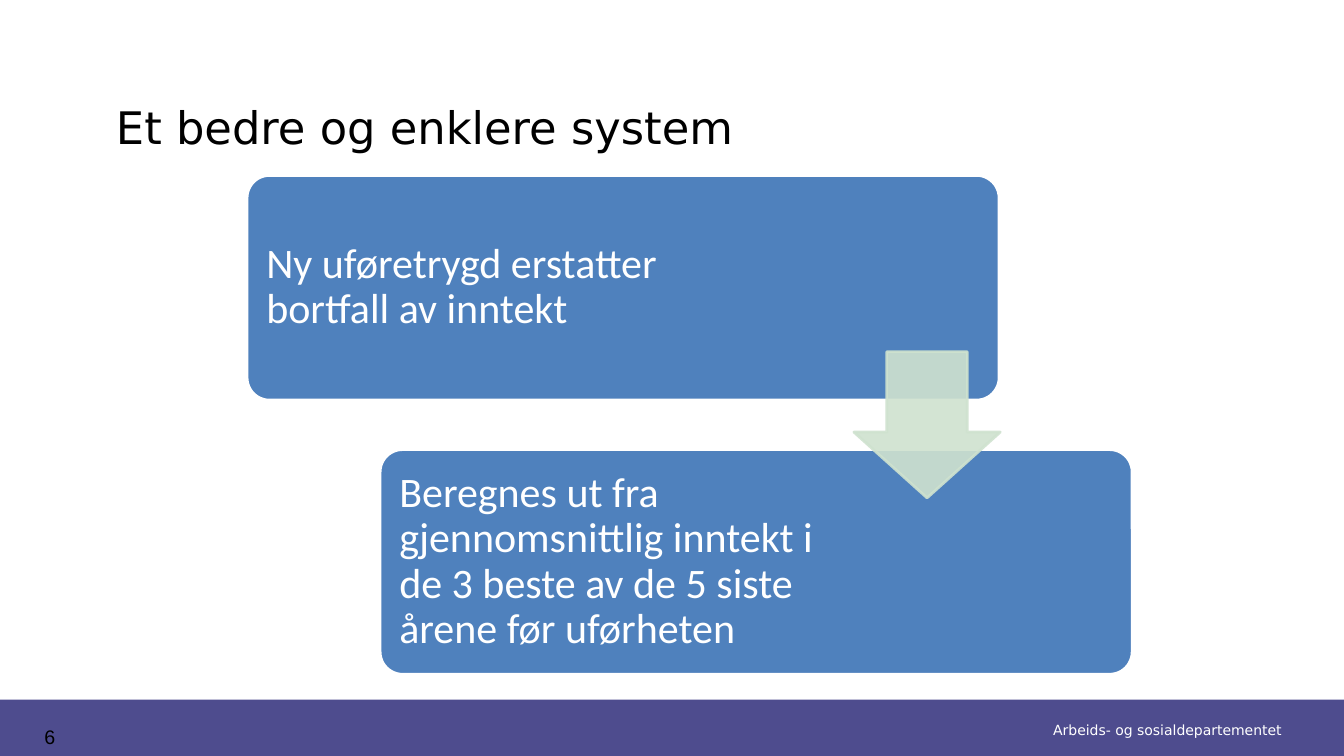
from lxml import etree
from pptx import Presentation
from pptx.dml.color import RGBColor
from pptx.enum.shapes import MSO_SHAPE
from pptx.enum.text import MSO_ANCHOR, MSO_AUTO_SIZE, PP_ALIGN
from pptx.oxml.ns import qn
from pptx.util import Inches, Pt

RECT, ROUND, DOWN = MSO_SHAPE.RECTANGLE, MSO_SHAPE.ROUNDED_RECTANGLE, MSO_SHAPE.DOWN_ARROW
TOP, MIDDLE, BOTTOM = MSO_ANCHOR.TOP, MSO_ANCHOR.MIDDLE, MSO_ANCHOR.BOTTOM
LEFT, CENTER, RIGHT = PP_ALIGN.LEFT, PP_ALIGN.CENTER, PP_ALIGN.RIGHT
NO_FIT = MSO_AUTO_SIZE.NONE
TITLE_ONLY = 5

COLORS = {"white": "FFFFFF", "black": "000000", "footer": "4E4C8E",
          "step": "4F81BD", "arrow": "CFE2CF"}

# Boxes are left, top, width, height in percent of the slide's size.
STEP_BOX = (18.38, 23.2, 55.96, 29.73)
STEP_SHIFT = (9.9, 36.27)
STEP_PAD = (0.53, 0.87)
STEPS = [
    ("Ny uføretrygd erstatter bortfall av inntekt", 38.71),
    ("Beregnes ut fra gjennomsnittlig inntekt i de 3 beste av de 5 siste "
     "årene før uførheten", 34.28),
]


def rgb(name):
    return RGBColor.from_string(COLORS[name])


class SlideBuilder:
    def __init__(self, prs):
        self.w, self.h = prs.slide_width, prs.slide_height
        self.s = prs.slides.add_slide(prs.slide_layouts[TITLE_ONLY])

    def place(self, box):
        """Turn percentages of the slide into lengths."""
        return [int(v * size / 100) for v, size in zip(box, (self.w, self.h) * 2)]

    def set_text(self, sp, text, font, size, color, align=LEFT, anchor=TOP):
        tf = sp.text_frame
        tf.text = text
        tf.word_wrap = True
        tf.auto_size = NO_FIT
        tf.vertical_anchor = anchor
        p = tf.paragraphs[0]
        p.alignment = align
        f = p.runs[0].font
        f.name, f.size, f.color.rgb = font, Pt(size), rgb(color)
        return tf

    def title(self, box, text):
        sp = self.s.shapes.title
        sp.left, sp.top, sp.width, sp.height = self.place(box)
        self.set_text(sp, text, "DejaVu Sans", 32, "black", anchor=BOTTOM)

    def text(self, box, *args, **style):
        return self.set_text(self.s.shapes.add_textbox(*self.place(box)), *args, **style)

    def shape(self, kind, box, fill, line=None, adjust=(), opacity=100):
        sp = self.s.shapes.add_shape(kind, *self.place(box))
        sp.shadow.inherit = False
        for i, value in enumerate(adjust):
            sp.adjustments[i] = value
        sp.fill.solid()
        sp.fill.fore_color.rgb = rgb(fill)
        if line:
            sp.line.color.rgb = rgb(line)
            sp.line.width = Pt(2)
        else:
            sp.line.fill.background()
        if opacity < 100:
            for clr in sp._element.spPr.iter(qn("a:srgbClr")):
                etree.SubElement(clr, qn("a:alpha"), val=str(opacity * 1000))

    def step(self, i, text, text_width):
        x, y, w, h = STEP_BOX
        x, y = x + i * STEP_SHIFT[0], y + i * STEP_SHIFT[1]
        self.shape(ROUND, (x, y, w, h), "step", "white", [0.1])
        pad_x, pad_y = STEP_PAD
        tf = self.text((x + pad_x, y + pad_y, text_width, h - 2 * pad_y),
                       text, "Calibri", 30, "white", anchor=MIDDLE)
        tf.margin_left = tf.margin_right = tf.margin_top = tf.margin_bottom = Inches(0.12)
        tf.paragraphs[0].line_spacing = 0.9


def main():
    prs = Presentation()
    prs.slide_width, prs.slide_height = Inches(13.33), Inches(7.5)
    b = SlideBuilder(prs)
    b.shape(RECT, (0, 92.53, 100, 7.47), "footer")
    b.text((61.44, 94.8, 34.66, 3.6), "Arbeids- og sosialdepartementet",
           "DejaVu Sans", 10, "white", align=RIGHT, anchor=MIDDLE)
    b.text((0.75, 95.2, 5.93, 3.87), "6", "Arial", 14, "black", align=CENTER)
    b.title((7.88, 4.27, 76.97, 16.67), "Et bedre og enklere system")
    for i, (text, text_width) in enumerate(STEPS):
        b.step(i, text, text_width)
    b.shape(DOWN, (63.54, 46.53, 10.88, 19.33), "arrow", "arrow", [0.55, 0.45], 90)
    prs.save("out.pptx")


if __name__ == "__main__":
    main()
